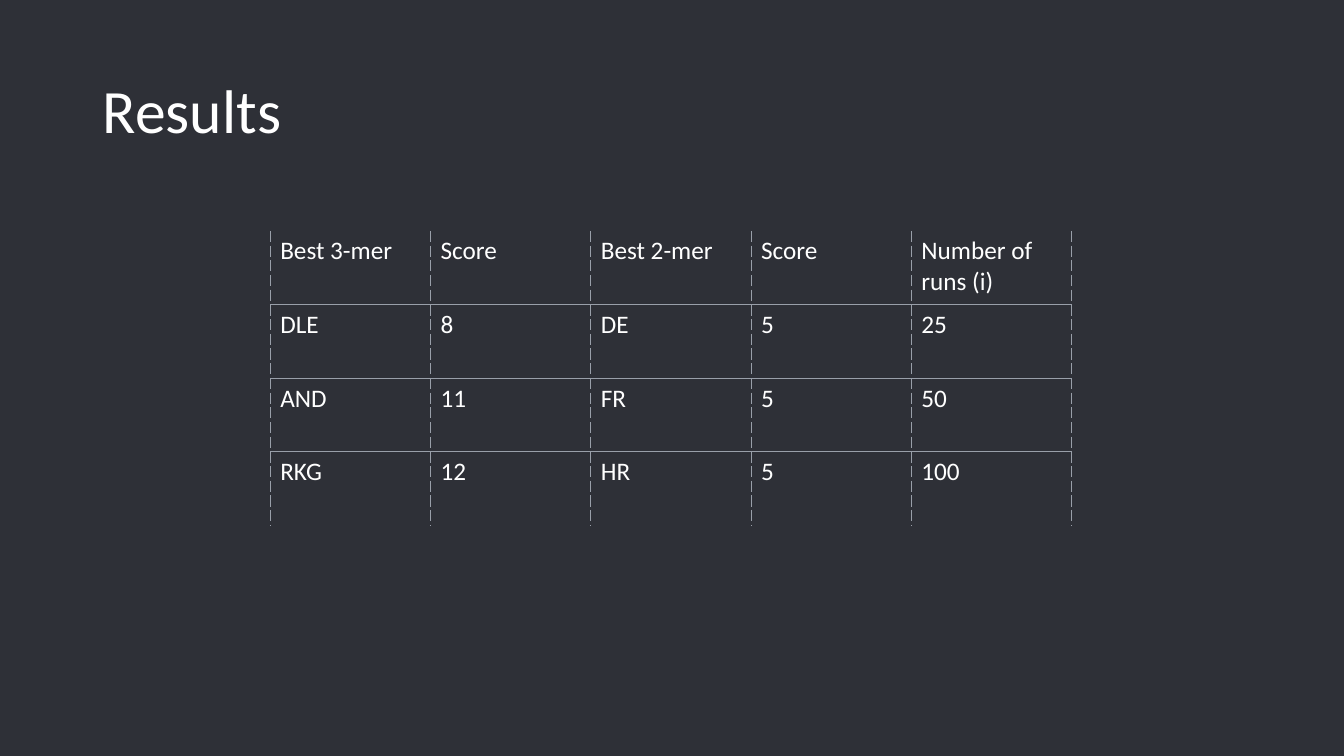
"""Build the results slide with its table of best k-mers."""
import pptx
import pptx.dml.color
import pptx.enum.text
import pptx.oxml.ns
import pptx.util
from lxml import etree

Inches = pptx.util.Inches
Pt = pptx.util.Pt
RGBColor = pptx.dml.color.RGBColor

BACKGROUND = RGBColor(0x2E, 0x30, 0x37)
TEXT = RGBColor(0xFF, 0xFF, 0xFF)
RULE = RGBColor(0x99, 0x9F, 0xA9)

RESULTS = [
    ["Best 3-mer", "Score", "Best 2-mer", "Score", "Number of runs (i)"],
    ["DLE", "8", "DE", "5", "25"],
    ["AND", "11", "FR", "5", "50"],
    ["RKG", "12", "HR", "5", "100"],
]


class SlideBuilder:
    font = "Calibri"
    title_size = Pt(44)
    body_size = Pt(18)
    rule_width = Pt(0.75)

    def __init__(self, prs):
        self.slide = prs.slides.add_slide(prs.slide_layouts[5])
        fill = self.slide.background.fill
        fill.solid()
        fill.fore_color.rgb = BACKGROUND

    def add_run(self, p, text, size):
        r = p.add_run()
        r.text = text
        r.font.name = self.font
        r.font.size = size
        r.font.bold = False
        r.font.color.rgb = TEXT

    def title(self, text, left, top, width, height):
        sp = self.slide.shapes.title
        sp.left, sp.top = Inches(left), Inches(top)
        sp.width, sp.height = Inches(width), Inches(height)
        tf = sp.text_frame
        tf.word_wrap = True
        tf.vertical_anchor = pptx.enum.text.MSO_ANCHOR.MIDDLE
        p = tf.paragraphs[0]
        p.alignment = pptx.enum.text.PP_ALIGN.LEFT
        p.line_spacing = 0.9
        self.add_run(p, text, self.title_size)

    def border(self, cell, side, dash):
        qn = pptx.oxml.ns.qn
        tcPr = cell._tc.get_or_add_tcPr()
        ln = etree.SubElement(tcPr, qn(f"a:ln{side}"), w=str(self.rule_width))
        if dash is None:
            etree.SubElement(ln, qn("a:noFill"))
            return
        fill = etree.SubElement(ln, qn("a:solidFill"))
        etree.SubElement(fill, qn("a:srgbClr"), val=str(RULE))
        etree.SubElement(ln, qn("a:prstDash"), val=dash)

    def table(self, rows, left, top, col_width, row_height):
        n_rows, n_cols = len(rows), len(rows[0])
        frame = self.slide.shapes.add_table(
            n_rows, n_cols, Inches(left), Inches(top),
            Inches(col_width * n_cols), Inches(row_height * n_rows))
        table = frame.table
        table.first_row = table.horz_banding = False
        for column in table.columns:
            column.width = Inches(col_width)
        for i, values in enumerate(rows):
            table.rows[i].height = Inches(row_height)
            for j, value in enumerate(values):
                cell = table.cell(i, j)
                self.border(cell, "L", "dash")
                self.border(cell, "R", "dash")
                self.border(cell, "T", "solid" if i > 0 else None)
                self.border(cell, "B", "solid" if i < n_rows - 1 else None)
                cell.fill.background()
                self.add_run(cell.text_frame.paragraphs[0], value, self.body_size)


def main():
    prs = pptx.Presentation()
    prs.slide_width, prs.slide_height = Inches(13.33), Inches(7.5)
    builder = SlideBuilder(prs)
    builder.title("Results", 0.92, 0.4, 11.5, 1.45)
    builder.table(RESULTS, 2.68, 2.29, 1.59, 0.73)
    prs.save("out.pptx")


if __name__ == "__main__":
    main()
